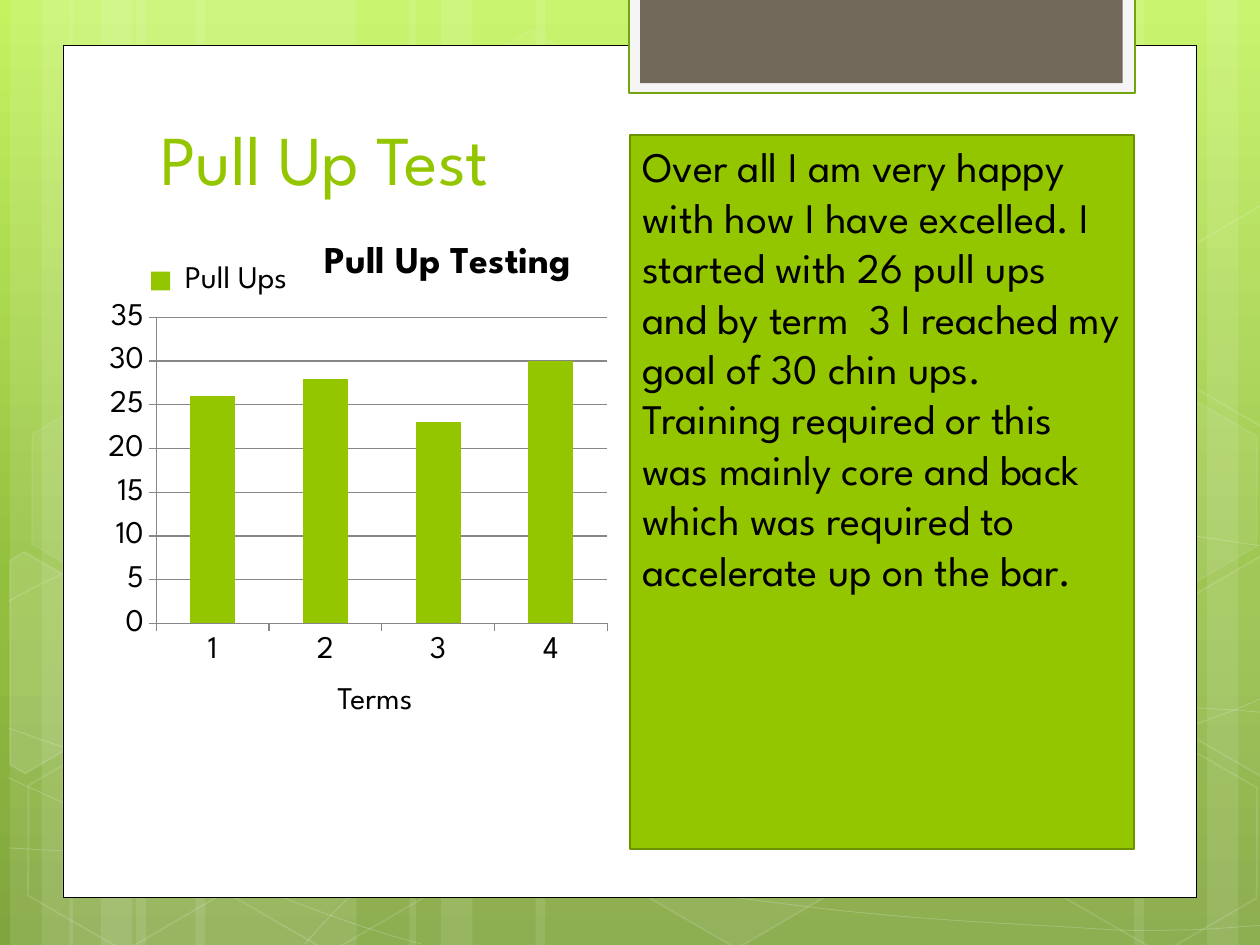
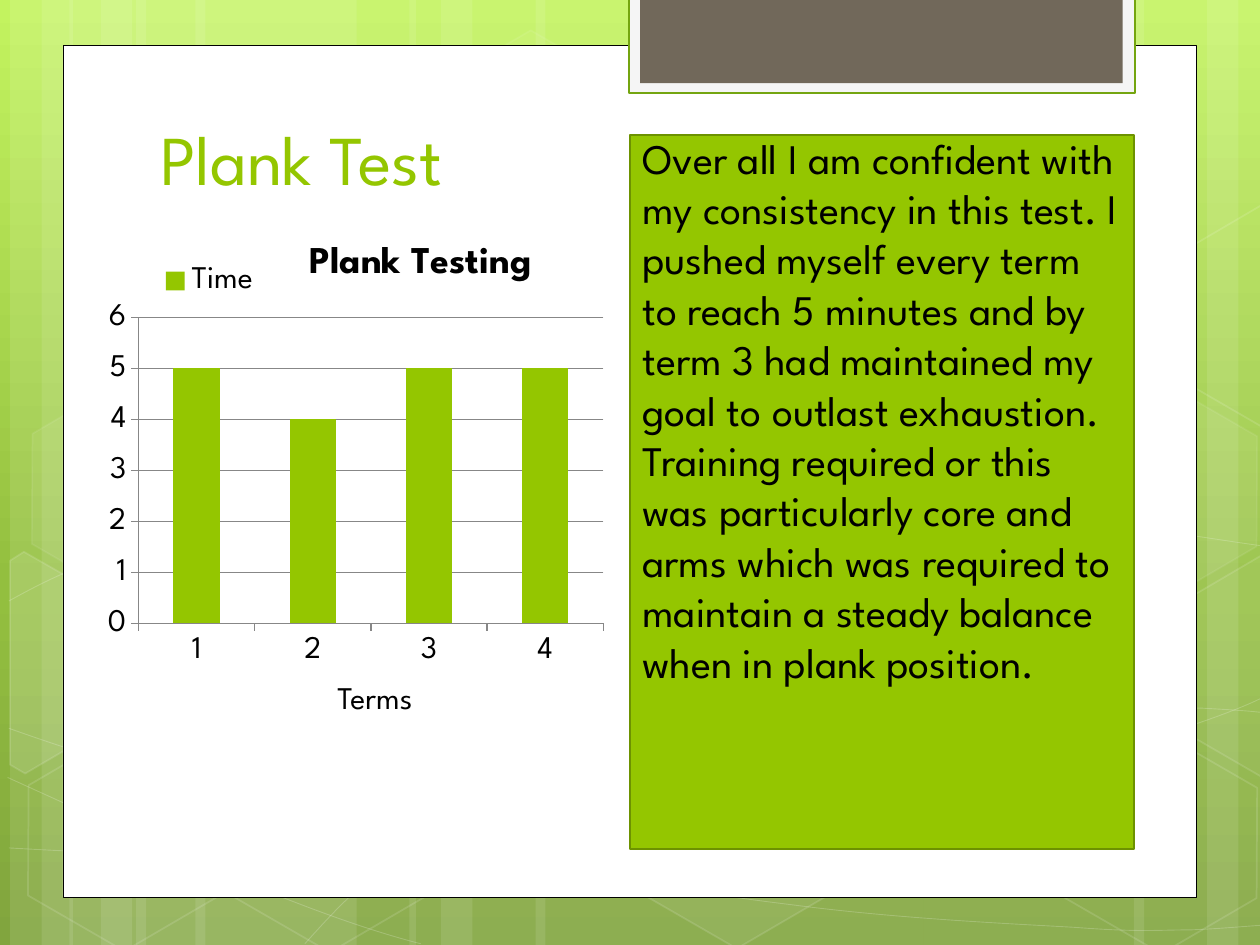
"""Builds two fitness test slides, each with a column chart and a comment panel."""
from copy import deepcopy

from lxml.etree import SubElement
from pptx import Presentation
from pptx.chart.data import CategoryChartData
from pptx.dml.color import RGBColor
from pptx.enum.chart import XL_CHART_TYPE, XL_LEGEND_POSITION, XL_TICK_MARK
from pptx.enum.shapes import MSO_SHAPE
from pptx.enum.text import MSO_ANCHOR, MSO_AUTO_SIZE, PP_ALIGN
from pptx.oxml.ns import qn
from pptx.util import Inches, Pt

FONT = "League Spartan"
GREEN, WHITE, BLACK, GRAY = "94C600", "FFFFFF", "000000", "878787"
GRADIENT = [(0, "C3F35F"), (0.62, "93BF3F"), (1, "81A53E")]
TERMS = ["1", "2", "3", "4"]

TESTS = [
    dict(title="Pull Up Test", chart_title="Pull Up Testing", series=" Pull Ups",
         values=[26, 28, 23, 30], top=35, step=5, chart_width=5.5, heading=(2.52, 1.87),
         plot=(1.24, 2.52, 3.58, 2.43), legend=(1.14, 2.05, 1.2, 0.36), comment_box=(1.07, 4.54),
         comment="Over all I am very happy with how I have excelled. I started with 26 pull ups "
                 "and by term  3 I reached my goal of 30 chin ups. Training required or this was "
                 "mainly core and back which was required to accelerate up on the bar."),
    dict(title="Plank Test", chart_title="Plank Testing", series="Time",
         values=[5, 4, 5, 5], top=6, step=1, chart_width=5.08, heading=(2.4, 1.87),
         plot=(1.1, 2.52, 3.69, 2.43), legend=(1.24, 2.05, 0.85, 0.36), comment_box=(1, 5.76),
         comment="Over all I am confident with my consistency in this test. I pushed myself every "
                 "term to reach 5 minutes and by term 3 had maintained my goal to outlast "
                 "exhaustion. Training required or this was particularly core and arms which was "
                 "required to maintain a steady balance when in plank position."),
]

BANDS = [(1.08, 1.75), (0.08, 0.5), (0.33, 0.83), (1.55, 1.75), (0.55, 0.5), (0.8, 0.83),
         (7.33, 1.75), (9.58, 0.5), (9, 0.83), (4.25, 3.08), (3.25, 0.5), (3.5, 0.83)]

CURVES = [
    [(0.07, 6.73), (0.61, 6.76), (1.15, 6.79), (1.9, 6.78), (2.65, 6.77), (3.58, 6.75),
     (4.58, 6.65), (5.58, 6.55), (7, 6.36), (7.92, 6.17), (8.83, 5.98), (9.77, 5.68),
     (10.07, 5.51)],
    [(0.07, 4.77), (0.36, 4.61), (0.65, 4.46), (1.21, 4.31), (1.78, 4.16), (2.59, 3.94),
     (3.47, 3.87), (4.36, 3.8), (5.44, 3.79), (6.54, 3.87), (7.64, 3.95), (9.47, 4.26),
     (10.07, 4.34)],
    [(0.06, 6.17), (1.27, 6.72), (2.47, 7.27), (3.34, 7.49)],
    [(0.07, 5.78), (0.38, 5.89), (0.7, 6), (1.28, 6.16), (1.86, 6.31), (2.73, 6.56),
     (3.57, 6.73), (4.4, 6.9), (5.45, 7.08), (6.28, 7.18), (7.11, 7.29), (8, 7.33),
     (8.53, 7.36), (9.05, 7.4), (9.19, 7.38), (9.45, 7.38), (9.71, 7.37), (9.89, 7.35),
     (10.07, 7.34)],
    [(2.42, 7.49), (2.6, 7.29), (2.78, 7.09), (3.02, 6.91), (3.26, 6.73), (3.6, 6.53),
     (3.88, 6.39), (4.16, 6.25), (4.33, 6.19), (4.7, 6.09), (5.06, 5.99), (5.73, 5.85),
     (6.08, 5.78), (6.44, 5.71), (6.49, 5.71), (6.8, 5.69), (7.11, 5.66), (7.6, 5.63),
     (7.94, 5.62), (8.29, 5.61), (8.86, 5.62), (8.86, 5.62), (9.08, 5.62), (9.31, 5.62),
     (9.53, 5.62), (9.71, 5.63), (9.88, 5.64), (9.97, 5.65), (10.06, 5.66), (10.03, 5.65),
     (10.06, 5.66)],
]

# left, top, fill opacity, line opacity
HEXAGONS = [(3.34, 0.36, 4, 8), (4.97, 5.89, 6, 12), (0.11, 5.91, 0, 12), (0.14, 3.12, 7, 8),
            (1.74, 5.92, 0, 12), (7.53, 4.53, 10, 12), (8.34, 5.93, 0, 12), (8.34, 3.14, 7, 8)]

CUT_HEXAGONS = [
    ([(0.08, 4.45), (0.19, 4.38), (0.96, 4.82), (0.95, 5.7), (0.2, 6.14), (0.08, 6.07)], 10),
    ([(9.26, 4.85), (10.01, 4.41), (10.09, 4.46), (10.09, 6.13), (10.02, 6.17), (9.26, 5.73)], 4),
    ([(9.26, 2.07), (10.01, 1.63), (10.1, 1.68), (10.09, 3.35), (10.02, 3.39), (9.26, 2.95)], 0),
]


def paint(fill, color, opacity=100):
    """Give a fill a solid colour, or none at zero opacity."""
    if not opacity:
        fill.background()
        return
    fill.solid()
    fill.fore_color.rgb = RGBColor.from_string(color)
    if opacity < 100:
        clr = fill._xPr.find(".//" + qn("a:srgbClr"))
        SubElement(clr, qn("a:alpha"), val=str(opacity * 1000))


def style(sp, fill=WHITE, fill_opacity=100, line=WHITE, width=1, line_opacity=100):
    """Set fill and outline and drop the shadow."""
    sp.shadow.inherit = False
    paint(sp.fill, fill, fill_opacity)
    paint(sp.line.fill, line, line_opacity)
    if line_opacity:
        sp.line.width = Pt(width)


def add_preset(s, kind, box, **look):
    """Add a styled preset shape."""
    sp = s.shapes.add_shape(kind, *map(Inches, box))
    style(sp, **look)
    return sp


def add_outline(s, points, close, **look):
    """Add a styled freeform through the points."""
    start, *rest = [(Inches(x), Inches(y)) for x, y in points]
    builder = s.shapes.build_freeform(*start)
    builder.add_line_segments(rest, close=close)
    sp = builder.convert_to_shape()
    style(sp, **look)
    return sp


def add_curve(s, points):
    """Add a thin line whose points are chained cubic control points."""
    sp = add_outline(s, points, False, fill_opacity=0, width=0.5, line_opacity=20)
    lines = list(sp.element.iter(qn("a:lnTo")))
    for i in range(0, len(lines), 3):
        curve = SubElement(lines[i].getparent(), qn("a:cubicBezTo"))
        for line in lines[i:i + 3]:
            curve.append(line[0])
            line.getparent().remove(line)


def set_font(font, size, color=BLACK, bold=False):
    """Apply the deck font."""
    font.name, font.size, font.bold = FONT, Pt(size), bold
    font.color.rgb = RGBColor.from_string(color)


def add_backdrop(s, layout):
    """Draw the shared gradient, bands, lines, card and tab, and move them to the layout."""
    fill = layout.background.fill
    fill.gradient()
    fill.gradient_angle = 270
    stops = layout.element.find(".//" + qn("a:gsLst"))
    stops.append(deepcopy(stops[-1]))
    for stop, (position, color) in zip(fill.gradient_stops, GRADIENT):
        stop.position = position
        stop.color.rgb = RGBColor.from_string(color)

    for left, width in BANDS:
        add_preset(s, MSO_SHAPE.RECTANGLE, (left, 0, width, 7.5), fill_opacity=10, line_opacity=0)
    for points in CURVES:
        add_curve(s, points)
    for left, top, fill_opacity, line_opacity in HEXAGONS:
        sp = add_preset(s, MSO_SHAPE.HEXAGON, (left, top, 1.75, 1.52),
                        fill_opacity=fill_opacity, line_opacity=line_opacity)
        sp.adjustments[0] = 0.285
        sp.rotation = 30
    for points, opacity in CUT_HEXAGONS:
        add_outline(s, points, True, fill_opacity=opacity, line_opacity=12)

    add_preset(s, MSO_SHAPE.RECTANGLE, (0.5, 0.36, 9, 6.76), line=BLACK, width=0.5)
    add_preset(s, MSO_SHAPE.RECTANGLE, (4.99, -0.02, 4.02, 0.76),
               fill="F5F5F5", line="74A510", width=1.25)
    add_preset(s, MSO_SHAPE.RECTANGLE, (5.08, -0.02, 3.83, 0.68), fill="71685A", line_opacity=0)

    tree = layout.shapes[0].element.getparent()
    for footer in list(layout.placeholders)[1:]:
        tree.remove(footer.element)
    for sp in list(s.shapes)[1:]:
        tree.append(sp.element)


def add_title(s, text):
    """Fill and format the title placeholder."""
    title = s.shapes.title
    title.left, title.top, title.width, title.height = map(Inches, (1.17, 0.67, 7.68, 0.96))
    tf = title.text_frame
    tf.text = text
    tf.auto_size = MSO_AUTO_SIZE.NONE
    tf.vertical_anchor = MSO_ANCHOR.BOTTOM
    p = tf.paragraphs[0]
    p.alignment = PP_ALIGN.LEFT
    set_font(p.font, 40, GREEN)


def add_text(s, text, box, size):
    """Add a wrapping text box."""
    tf = s.shapes.add_textbox(*map(Inches, box)).text_frame
    tf.word_wrap = True
    tf.text = text
    set_font(tf.paragraphs[0].font, size)


def set_layout(el, index, box, frame, inner=False):
    """Place a chart part at a position or box given in slide inches."""
    for old in el.findall(qn("c:layout")):
        el.remove(old)
    layout = el.makeelement(qn("c:layout"))
    el.insert(index, layout)
    manual = SubElement(layout, qn("c:manualLayout"))
    if inner:
        SubElement(manual, qn("c:layoutTarget"), val="inner")
    for name in ("xMode", "yMode"):
        SubElement(manual, qn("c:" + name), val="edge")
    origins = (frame[0], frame[1], 0, 0)
    sizes = frame[2:] * 2
    for name, value, origin, size in zip("xywh", box, origins, sizes):
        SubElement(manual, qn("c:" + name), val=f"{(value - origin) / size:.3f}")


def add_test_chart(s, test):
    """Add the column chart of results per term."""
    frame = (0.75, 1.83, test["chart_width"], 3.5)
    data = CategoryChartData()
    data.categories = TERMS
    data.add_series(test["series"], test["values"])
    chart = s.shapes.add_chart(XL_CHART_TYPE.COLUMN_CLUSTERED, *map(Inches, frame), data).chart
    set_font(chart.font, 18)

    chart.has_title = True
    tf = chart.chart_title.text_frame
    tf.text = test["chart_title"]
    set_font(tf.paragraphs[0].font, 21.6, bold=True)
    set_layout(chart.chart_title._element, 1, test["heading"], frame)

    plot = chart.plots[0]
    plot.gap_width = 150
    plot.vary_by_categories = False
    paint(plot.series[0].format.fill, GREEN)

    axis = chart.value_axis
    axis.minimum_scale, axis.maximum_scale, axis.major_unit = 0, test["top"], test["step"]
    axis.has_major_gridlines = True
    for ax in (axis, chart.category_axis):
        ax.major_tick_mark = XL_TICK_MARK.OUTSIDE
    for line in (axis.format.line, chart.category_axis.format.line,
                 axis.major_gridlines.format.line):
        paint(line.fill, GRAY)
        line.width = Pt(0.75)

    chart.has_legend = True
    chart.legend.position = XL_LEGEND_POSITION.RIGHT
    chart.legend.include_in_layout = False
    set_layout(chart.legend._element, -1, test["legend"], frame)
    set_layout(chart._chartSpace.find(".//" + qn("c:plotArea")), 0, test["plot"], frame, inner=True)


def main():
    """Build and save the deck."""
    prs = Presentation()
    prs.slide_width, prs.slide_height = Inches(10), Inches(7.5)
    layout = prs.slide_layouts[5]
    slides = [prs.slides.add_slide(layout) for _ in TESTS]
    add_backdrop(slides[0], layout)
    for s, test in zip(slides, TESTS):
        add_title(s, test["title"])
        add_test_chart(s, test)
        add_preset(s, MSO_SHAPE.RECTANGLE, (5, 1.07, 4, 5.67),
                   fill=GREEN, line="6D9200", width=1.25)
        top, height = test["comment_box"]
        add_text(s, test["comment"], (5, top, 4, height), 24)
        add_text(s, "Terms", (2.58, 5.33, 0.92, 0.4), 18)
    prs.save("out.pptx")


if __name__ == "__main__":
    main()
